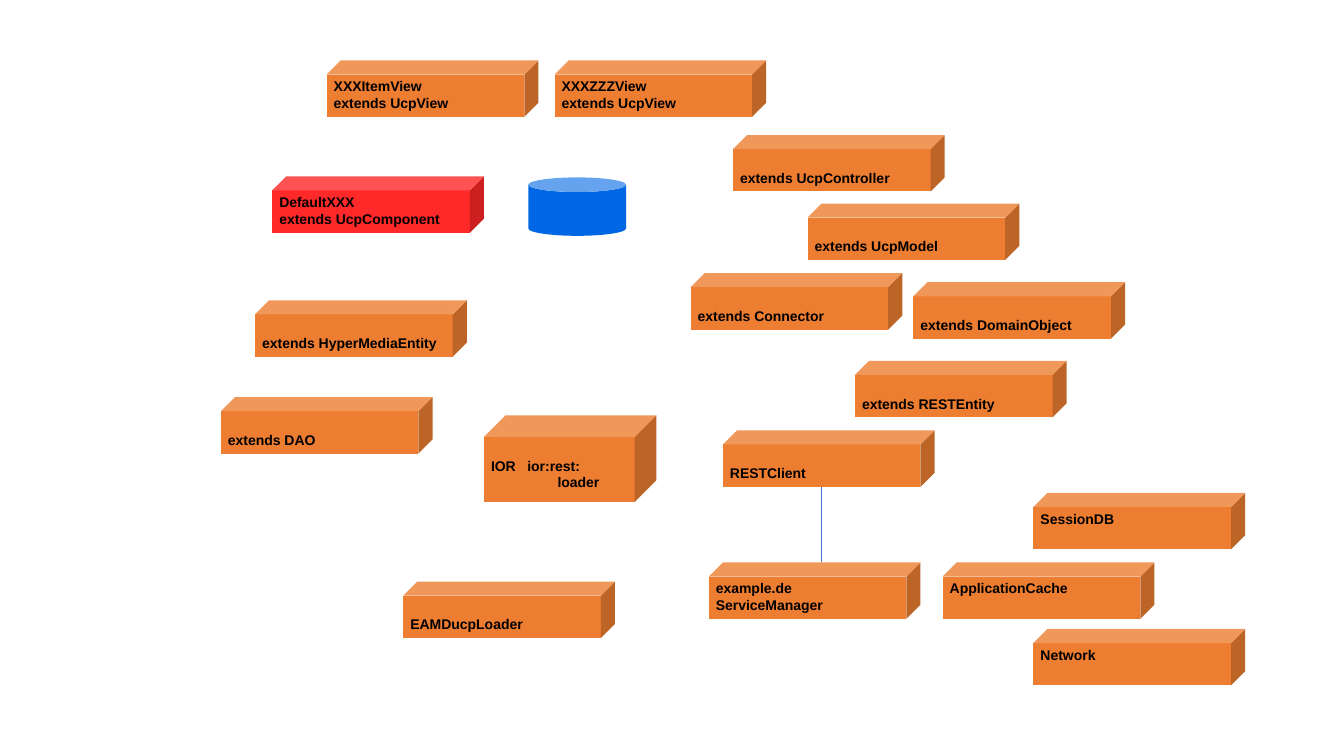
from lxml.etree import SubElement
from pptx import Presentation
from pptx.dml.color import RGBColor
from pptx.enum.shapes import MSO_CONNECTOR, MSO_SHAPE
from pptx.enum.text import MSO_ANCHOR, PP_ALIGN
from pptx.oxml.ns import qn
from pptx.util import Inches, Pt

ORANGE, RED, BLUE, LINE, BLACK = "ED7D31", "FF2929", "0067E4", "4472C4", "000000"
BOX_W, BOX_H = 2.1, 0.56
CUBE_DEPTH = 0.25
TOP, SECOND_LINE = 0.03, 0.2

TWO_LINE = [
    (2.7, 1.75, RED, ["DefaultXXX", "extends UcpComponent"]),
    (3.24, 0.6, ORANGE, ["XXXItemView", "extends UcpView"]),
    (5.5, 0.6, ORANGE, ["XXXZZZView", "extends UcpView"]),
    (7.03, 5.58, ORANGE, ["example.de", "ServiceManager"]),
]
LOWERED = [
    (7.27, 1.34, "extends UcpController"),
    (6.85, 2.71, "extends Connector"),
    (2.19, 3.94, "extends DAO"),
    (9.06, 2.8, "extends DomainObject"),
    (8.48, 3.58, "extends RESTEntity"),
    (2.53, 2.98, "extends HyperMediaEntity"),
    (8.01, 2.02, "extends UcpModel"),
    (7.17, 4.27, "RESTClient"),
    (4, 5.77, "EAMDucpLoader"),
]
SERVICES = [
    (9.35, 5.58, "ApplicationCache"),
    (10.25, 4.89, "SessionDB"),
    (10.25, 6.24, "Network"),
]
IOR_AT = (4.8, 4.12, 1.71, 0.86)
IOR_LINES = ["IOR\tior:rest:", "\tloader"]
IOR_TABS = [0.36, 0.66]
STORE_AT = (5.24, 1.76, 0.97, 0.58)
LINK_X, LINK_TOP, LINK_BOTTOM = 8.15, 4.83, 5.58
FONT = {"name": "Arial", "size": Pt(10), "bold": True}


def rgb(value):
    return RGBColor.from_string(value)


def add_solid(s, kind, at, color):
    sp = s.shapes.add_shape(kind, *map(Inches, at))
    sp.shadow.inherit = False
    sp.fill.solid()
    sp.fill.fore_color.rgb = rgb(color)
    sp.line.fill.background()
    return sp


def add_cube(s, at, color, lines, top, tabs=()):
    sp = add_solid(s, MSO_SHAPE.CUBE, at, color)
    sp.adjustments[0] = CUBE_DEPTH
    tf = sp.text_frame
    frame = {
        "word_wrap": True,
        "vertical_anchor": MSO_ANCHOR.TOP,
        "margin_left": Inches(0.07),
        "margin_right": Inches(0.07),
        "margin_top": Inches(top),
        "margin_bottom": Inches(0.03),
    }
    for key, value in frame.items():
        setattr(tf, key, value)
    tf.text = "\n".join(lines)
    for p in tf.paragraphs:
        p.alignment = PP_ALIGN.LEFT
        for r in p.runs:
            for key, value in FONT.items():
                setattr(r.font, key, value)
            r.font.color.rgb = rgb(BLACK)
    for p, pos in zip(tf.paragraphs, tabs):
        stops = SubElement(p._p.get_or_add_pPr(), qn("a:tabLst"))
        SubElement(stops, qn("a:tab"), pos=str(Inches(pos)), algn="l")


def add_link(s):
    x = Inches(LINK_X)
    link = s.shapes.add_connector(
        MSO_CONNECTOR.STRAIGHT, x, Inches(LINK_TOP), x, Inches(LINK_BOTTOM))
    link.line.color.rgb = rgb(LINE)
    link.line.width = Pt(0.5)
    SubElement(link._element.spPr, qn("a:effectLst"))


def main():
    prs = Presentation()
    prs.slide_width, prs.slide_height = Inches(13.33), Inches(7.5)
    s = prs.slides.add_slide(prs.slide_layouts[6])
    add_solid(s, MSO_SHAPE.CAN, STORE_AT, BLUE)
    for x, y, color, lines in TWO_LINE:
        add_cube(s, (x, y, BOX_W, BOX_H), color, lines, TOP)
    for boxes, top in ((LOWERED, SECOND_LINE), (SERVICES, TOP)):
        for x, y, name in boxes:
            add_cube(s, (x, y, BOX_W, BOX_H), ORANGE, [name], top)
    add_cube(s, IOR_AT, ORANGE, IOR_LINES, SECOND_LINE, IOR_TABS)
    add_link(s)
    prs.save("out.pptx")


if __name__ == "__main__":
    main()
